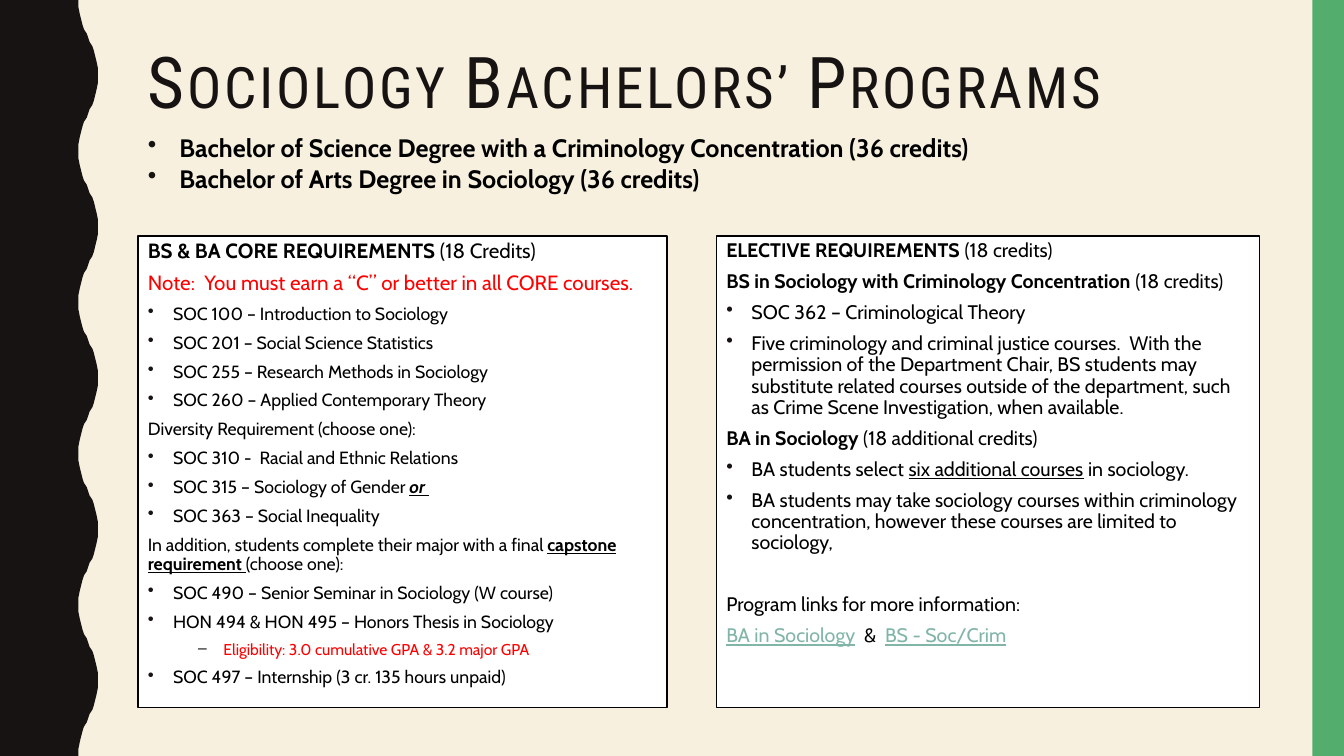
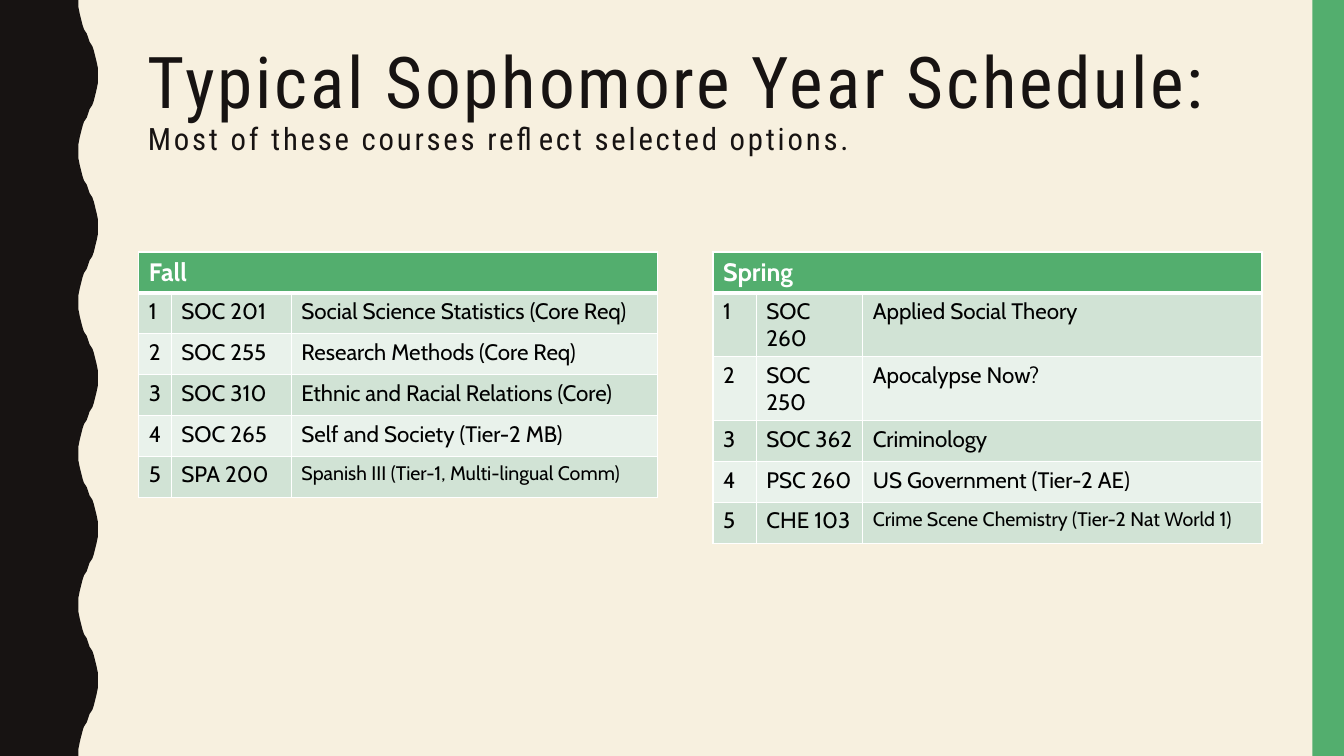
from dataclasses import dataclass

from lxml import etree
from pptx import Presentation
from pptx import util as u
from pptx.dml import color as c
from pptx.enum import shapes, text
from pptx.oxml import ns

Pt = u.Pt


@dataclass(frozen=True)
class Theme:
    paper: str = "F7F0DF"
    dark: str = "171312"
    green: str = "53AE6E"
    white: str = "FFFFFF"
    black: str = "000000"
    red: str = "FF0000"
    link: str = "81B5A8"
    bands: tuple = ("D1E3D5", "E9F2EB")
    title_font: str = "Roboto Condensed"
    body_font: str = "Cabin"
    title_size: float = 51
    subtitle_size: float = 22
    lead_size: float = 18
    core_head_size: float = 14.7
    core_size: float = 12.6
    core_note_size: float = 11.2
    elective_size: float = 14
    table_head_size: float = 18
    table_size: float = 16
    table_small_size: float = 14


@dataclass(frozen=True)
class Line:
    runs: tuple
    size: float
    color: str = "000000"
    bullet: str = ""
    margin: float = 0
    hang: float = 18
    before: float = 7
    spacing: float = 0.9


THEME = Theme()
WIDTH, HEIGHT = 960, 540
TITLE_BOX = (98.5, 30, 801, 72)
WAVE_HALF = 54
WAVE_QUARTER = [(56, 0), (56.3, 5), (57, 10), (58, 14.5), (59, 18), (60, 21), (61.5, 24)]
WAVE_SUM = 126


def rgb(value):
    return c.RGBColor.from_string(value)


def place(box):
    return [Pt(length) for length in box]


def paint(shape, fill, line=None):
    shape.shadow.inherit = False
    shape.fill.solid()
    shape.fill.fore_color.rgb = rgb(fill)
    if line:
        shape.line.color.rgb = rgb(line)
        shape.line.width = Pt(1)
    else:
        shape.line.fill.background()


def style_run(run, font, size, color, marks=""):
    run.font.name = font
    run.font.size = Pt(size)
    run.font.color.rgb = rgb(color)
    run.font.bold = "b" in marks
    run.font.italic = "i" in marks
    run.font.underline = "u" in marks


def add_bullet(paragraph, line):
    properties = paragraph._p.get_or_add_pPr()
    properties.set("marL", str(Pt(line.margin)))
    properties.set("indent", str(-Pt(line.hang)))
    bullet_color = etree.SubElement(properties, ns.qn("a:buClr"))
    etree.SubElement(bullet_color, ns.qn("a:srgbClr"), val=THEME.dark)
    etree.SubElement(properties, ns.qn("a:buChar"), char=line.bullet)


def fill_text(frame, lines):
    frame.word_wrap = True
    frame.vertical_anchor = text.MSO_ANCHOR.TOP
    for index, line in enumerate(lines):
        paragraph = frame.add_paragraph() if index else frame.paragraphs[0]
        paragraph.alignment = text.PP_ALIGN.LEFT
        paragraph.line_spacing = line.spacing
        paragraph.space_before = Pt(line.before)
        for words, marks in line.runs:
            run = paragraph.add_run()
            run.text = words
            color = THEME.link if "l" in marks else line.color
            style_run(run, THEME.body_font, line.size, color, marks)
        if line.bullet:
            add_bullet(paragraph, line)


def add_wave(slide):
    mirrored = [(WAVE_SUM - x, WAVE_HALF - y) for x, y in reversed(WAVE_QUARTER)]
    half = WAVE_QUARTER + [(WAVE_SUM / 2, WAVE_HALF / 2)] + mirrored
    edge = []
    for index in range(HEIGHT // WAVE_HALF):
        top = index * WAVE_HALF
        if index % 2:
            edge += [(x, top + WAVE_HALF - y) for x, y in reversed(half)]
        else:
            edge += [(x, top + y) for x, y in half]
    builder = slide.shapes.build_freeform(0, 0, scale=Pt(1))
    builder.add_line_segments(edge + [(0, HEIGHT)], close=True)
    paint(builder.convert_to_shape(), THEME.dark)


def add_title(slide, box, lines, small_caps=False):
    frame = slide.shapes.add_textbox(*place(box)).text_frame
    frame.word_wrap = True
    for index, (words, size) in enumerate(lines):
        paragraph = frame.add_paragraph() if index else frame.paragraphs[0]
        paragraph.text = words
        paragraph.line_spacing = 0.9
        run = paragraph.runs[0]
        style_run(run, THEME.title_font, size, THEME.dark)
        properties = run._r.get_or_add_rPr()
        properties.set("spc", "200")
        if small_caps:
            properties.set("cap", "small")


def add_base_slide(presentation):
    slide = presentation.slides.add_slide(presentation.slide_layouts[6])
    add_wave(slide)
    band = slide.shapes.add_shape(
        shapes.MSO_SHAPE.RECTANGLE, *place((937.5, 0, WIDTH - 937.5, HEIGHT)))
    paint(band, THEME.green)
    return slide


def add_panel(slide, box, lines):
    panel = slide.shapes.add_shape(shapes.MSO_SHAPE.RECTANGLE, *place(box))
    paint(panel, THEME.white, THEME.black)
    fill_text(panel.text_frame, lines)


def set_borders(cell, top, bottom):
    properties = cell._tc.get_or_add_tcPr()
    for side, width in (("L", 1), ("R", 1), ("T", top), ("B", bottom)):
        border = etree.SubElement(properties, ns.qn(f"a:ln{side}"), w=str(Pt(width)))
        fill = etree.SubElement(border, ns.qn("a:solidFill"))
        etree.SubElement(fill, ns.qn("a:srgbClr"), val=THEME.white)


def style_cell(cell, fill, size, color, marks=""):
    cell.fill.solid()
    cell.fill.fore_color.rgb = rgb(fill)
    for run in cell.text_frame.paragraphs[0].runs:
        style_run(run, THEME.body_font, size, color, marks)


def add_schedule(slide, left, top, widths, term, courses):
    row_height = 29.2
    box = (left, top, sum(widths), row_height * (len(courses) + 1))
    table = slide.shapes.add_table(len(courses) + 1, len(widths), *place(box)).table
    table.horz_banding = False
    for column, width in zip(table.columns, widths):
        column.width = Pt(width)
    for row in table.rows:
        row.height = Pt(row_height)

    table.cell(0, 0).merge(table.cell(0, len(widths) - 1))
    table.cell(0, 0).text_frame.text = term
    for cell in table.rows[0].cells:
        set_borders(cell, 1, 3)
        style_cell(cell, THEME.green, THEME.table_head_size, THEME.white, "b")

    for number, course in enumerate(courses, 1):
        for column, words in enumerate((str(number), *course)):
            cell = table.cell(number, column)
            cell.text_frame.text = words
            set_borders(cell, 3 if number == 1 else 1, 1)
            size = THEME.table_small_size if len(words) > 38 else THEME.table_size
            style_cell(cell, THEME.bands[(number - 1) % 2], size, THEME.black)


def plain(words, size, **options):
    return Line(((words, ""),), size, **options)


def bullet(size, *runs):
    return Line(runs, size, bullet="•", margin=18)


def core_lines():
    head, size = THEME.core_head_size, THEME.core_size

    def courses(*names):
        return [bullet(size, (name, "")) for name in names]

    return [
        Line((("BS & BA CORE REQUIREMENTS ", "b"), ("(18 Credits)", "")), head),
        plain("Note:  You must earn a “C” or better in all CORE courses.", head, color=THEME.red),
        *courses("SOC 100 – Introduction to Sociology",
                 "SOC 201 – Social Science Statistics",
                 "SOC 255 – Research Methods in Sociology",
                 "SOC 260 – Applied Contemporary Theory"),
        plain("Diversity Requirement (choose one):", size),
        *courses("SOC 310 -  Racial and Ethnic Relations"),
        bullet(size, ("SOC 315 – Sociology of Gender ", ""), ("or ", "biu")),
        *courses("SOC 363 – Social Inequality"),
        Line((("In addition, students complete their major with a final ", ""),
              ("capstone requirement ", "bu"), ("(choose one):", "")), size),
        *courses("SOC 490 – Senior Seminar in Sociology (W course)",
                 "HON 494 & HON 495 – Honors Thesis in Sociology"),
        plain("Eligibility: 3.0 cumulative GPA & 3.2 major GPA", THEME.core_note_size,
              color=THEME.red, bullet="–", margin=54),
        *courses("SOC 497 – Internship (3 cr. 135 hours unpaid)"),
    ]


def elective_lines():
    size = THEME.elective_size
    return [
        Line((("ELECTIVE REQUIREMENTS ", "b"), ("(18 credits)", "")), size),
        Line((("BS in Sociology with Criminology Concentration ", "b"),
              ("(18 credits)", "")), size),
        bullet(size, ("SOC 362 – Criminological Theory", "")),
        bullet(size, ("Five criminology and criminal justice courses.  With the permission of "
                      "the Department Chair, BS students may substitute related courses outside "
                      "of the department, such as Crime Scene Investigation, when available.", "")),
        Line((("BA in Sociology ", "b"), ("(18 additional credits)", "")), size),
        bullet(size, ("BA students select ", ""), ("six additional courses", "u"),
               (" in sociology.", "")),
        bullet(size, ("BA students may take sociology courses within criminology concentration, "
                      "however these courses are limited to sociology,", "")),
        plain("Program links for more information:", size, before=29.3),
        Line((("BA in Sociology", "ul"), ("  &  ", ""), ("BS - Soc/Crim", "ul")), size),
    ]


def build_programs(presentation):
    slide = add_base_slide(presentation)
    add_title(slide, TITLE_BOX, [("Sociology Bachelors’ Programs", THEME.title_size)], True)
    add_panel(slide, (98.5, 168.5, 378, 337), core_lines())
    add_panel(slide, (511.7, 168.5, 388, 337), elective_lines())
    degrees = ("Bachelor of Science Degree with a Criminology Concentration (36 credits)",
               "Bachelor of Arts Degree in Sociology (36 credits)")
    lead = slide.shapes.add_textbox(*place((98.5, 91.3, 771, 51)))
    fill_text(lead.text_frame, [
        Line(((degree, "b"),), THEME.lead_size, bullet="•", margin=22.5, hang=22.5,
             before=0, spacing=1.0)
        for degree in degrees])


def build_schedule(presentation):
    slide = add_base_slide(presentation)
    add_title(slide, (*TITLE_BOX[:3], 117), [
        ("Typical Sophomore Year Schedule:", THEME.title_size),
        ("Most of these courses reflect selected options.", THEME.subtitle_size)])
    add_schedule(slide, 99.2, 180, (23.2, 85.7, 261.4), "Fall", [
        ("SOC 201", "Social Science Statistics (Core Req)"),
        ("SOC 255", "Research Methods (Core Req)"),
        ("SOC 310", "Ethnic and Racial Relations (Core)"),
        ("SOC 265", "Self and Society (Tier-2 MB)"),
        ("SPA 200", "Spanish III (Tier-1, Multi-lingual Comm)")])
    add_schedule(slide, 509.3, 180, (31, 76, 285.2), "Spring", [
        ("SOC 260", "Applied Social Theory"),
        ("SOC 250", "Apocalypse Now?"),
        ("SOC 362", "Criminology"),
        ("PSC 260", "US Government (Tier-2 AE)"),
        ("CHE 103", "Crime Scene Chemistry (Tier-2 Nat World 1)")])


def main():
    presentation = Presentation()
    presentation.slide_width, presentation.slide_height = Pt(WIDTH), Pt(HEIGHT)
    background = presentation.slide_master.background.fill
    background.solid()
    background.fore_color.rgb = rgb(THEME.paper)
    build_programs(presentation)
    build_schedule(presentation)
    presentation.save("out.pptx")


if __name__ == "__main__":
    main()
